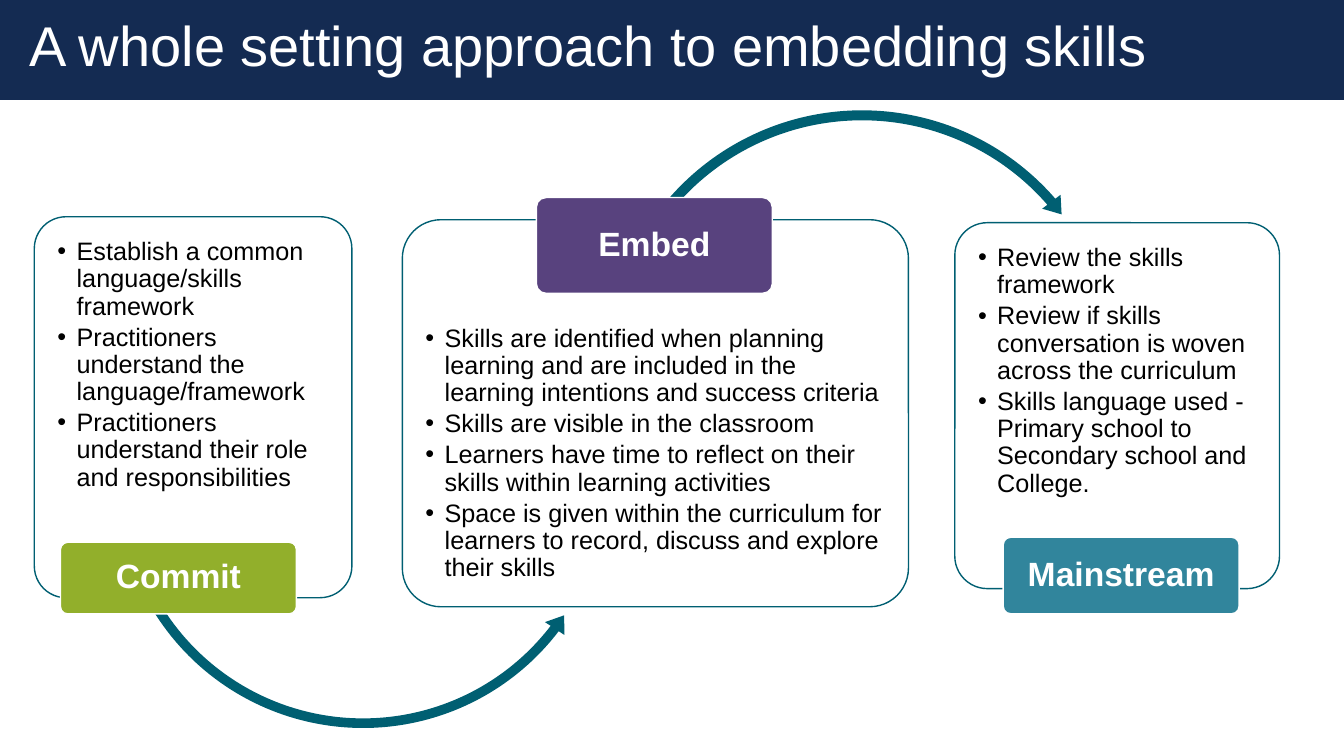
from pptx import Presentation
from pptx.dml.color import RGBColor
from pptx.enum.shapes import MSO_SHAPE
from pptx.enum.text import MSO_ANCHOR, MSO_AUTO_SIZE, PP_ALIGN
from pptx.oxml.ns import qn
from pptx.util import Inches, Pt
from lxml import etree

RECT = MSO_SHAPE.RECTANGLE
ROUND = MSO_SHAPE.ROUNDED_RECTANGLE
ARC = MSO_SHAPE.CIRCULAR_ARROW
LEFT_ARC = MSO_SHAPE.LEFT_CIRCULAR_ARROW
TOP, MIDDLE = MSO_ANCHOR.TOP, MSO_ANCHOR.MIDDLE
LEFT, CENTER = PP_ALIGN.LEFT, PP_ALIGN.CENTER
NO_FIT = MSO_AUTO_SIZE.NONE

NAVY = RGBColor(0x14, 0x2B, 0x52)
TEAL = RGBColor(0x00, 0x5F, 0x72)
GREEN = RGBColor(0x92, 0xAF, 0x2B)
PURPLE = RGBColor(0x58, 0x42, 0x7E)
BLUE = RGBColor(0x31, 0x85, 0x9C)
WHITE = RGBColor(0xFF, 0xFF, 0xFF)
BLACK = RGBColor(0x00, 0x00, 0x00)

prs = Presentation()
prs.slide_width, prs.slide_height = Inches(13.33), Inches(7.5)
slide = prs.slides.add_slide(prs.slide_layouts.get_by_name("Comparison"))
shapes = slide.shapes
tree = shapes.element
holders = {h.placeholder_format.idx: h for h in slide.placeholders}


def add_box(kind, box, fill, line=None, adjust=()):
    shape = shapes.add_shape(kind, *map(Inches, box))
    shape.shadow.inherit = False
    shape.fill.solid()
    shape.fill.fore_color.rgb = fill
    if line is None:
        shape.line.fill.background()
    else:
        shape.line.color.rgb = line
        shape.line.width = Pt(1)
    for i, value in enumerate(adjust):
        shape.adjustments[i] = value
    return shape


def add_run(para, text, size, color, bold=False):
    run = para.add_run()
    run.text = text
    run.font.name = "Arial"
    run.font.size = Pt(size)
    run.font.bold = bold
    run.font.color.rgb = color


# Stages: card, list holder and its box, bullets, arrow, tag
stages = [
    ((0.34, 2.15, 3.15, 3.78), 1, (0.43, 2.23, 2.98, 2.8),
     ["Establish a common language/skills framework",
      "Practitioners understand the language/framework",
      "Practitioners understand their role and responsibilities"],
     (LEFT_ARC, (1.09, 2.27, 5.02, 5.02), 9.7,
      (0.019, 2.312, 16.639, 86.816, 0.023)),
     "Commit", (0.6, 5.38, 2.34, 0.71), GREEN),
    ((3.99, 2.18, 5.02, 3.84), 2, (4.08, 3.09, 4.84, 2.84),
     ["Skills are identified when planning learning and are included in "
      "the learning intentions and success criteria",
      "Skills are visible in the classroom",
      "Learners have time to reflect on their skills within learning "
      "activities",
      "Space is given within the curriculum for learners to record, "
      "discuss and explore their skills"],
     (ARC, (5.95, 1.03, 5.2, 5.2), 345.8,
      (0.019, 2.228, 199.972, 129.71, 0.022)),
     "Embed", (5.32, 1.96, 2.34, 0.95), PURPLE),
    ((9.47, 2.21, 3.22, 3.63), 4, (9.56, 2.29, 3.05, 2.69),
     ["Review the skills framework",
      "Review if skills conversation is woven across the curriculum",
      "Skills language used - Primary school to Secondary school and "
      "College."],
     None, "Mainstream", (9.95, 5.33, 2.34, 0.76), BLUE),
]

# Header bar
add_box(RECT, (0, 0, 13.33, 0.99), NAVY)

for card_box, idx, list_box, points, arrow, name, tag_box, color in stages:
    # Card, slightly see-through
    card = add_box(ROUND, card_box, WHITE, TEAL, [0.1])
    tint = card.element.spPr.find(qn("a:solidFill"))[0]
    etree.SubElement(tint, qn("a:alpha"), val="90000")

    # Bullet list, raised above its card
    body = holders[idx]
    body.left, body.top, body.width, body.height = map(Inches, list_box)
    tree.append(body.element)
    frame = body.text_frame
    frame.word_wrap = True
    frame.auto_size = NO_FIT
    frame.vertical_anchor = TOP
    frame.margin_left = frame.margin_right = Inches(0.14)
    frame.margin_top = frame.margin_bottom = Inches(0.14)
    for i, point in enumerate(points):
        para = frame.add_paragraph() if i else frame.paragraphs[0]
        para.alignment = LEFT
        para.line_spacing = 0.9
        para.space_before = Pt(0)
        para.space_after = Pt(2.7)
        props = para._p.get_or_add_pPr()
        props.set("marL", str(Inches(0.19)))
        props.set("indent", str(-Inches(0.19)))
        etree.SubElement(props, qn("a:buChar"), char="•")
        add_run(para, point, 18, BLACK)

    # Curved arrow to the next stage
    if arrow:
        kind, box, turn, adjust = arrow
        add_box(kind, box, TEAL, adjust=adjust).rotation = turn

    # Stage tag
    tag = add_box(ROUND, tag_box, color, WHITE, [0.1])
    frame = tag.text_frame
    frame.word_wrap = True
    frame.vertical_anchor = MIDDLE
    frame.margin_left = frame.margin_right = Inches(0.05)
    frame.margin_top = frame.margin_bottom = Inches(0.03)
    para = frame.paragraphs[0]
    para.alignment = CENTER
    para.line_spacing = 0.9
    add_run(para, name, 24, WHITE, True)

# Title, raised above the bar
title = shapes.title
title.left, title.top = Inches(0.19), Inches(0.05)
title.width, title.height = Inches(12.66), Inches(0.77)
title.fill.solid()
title.fill.fore_color.rgb = NAVY
tree.append(title.element)
frame = title.text_frame
frame.word_wrap = True
frame.auto_size = NO_FIT
frame.vertical_anchor = TOP
para = frame.paragraphs[0]
para.alignment = LEFT
add_run(para, "A whole setting approach to embedding skills", 40, WHITE)

# Unused placeholder
tree.remove(holders[3].element)

prs.save("out.pptx")
